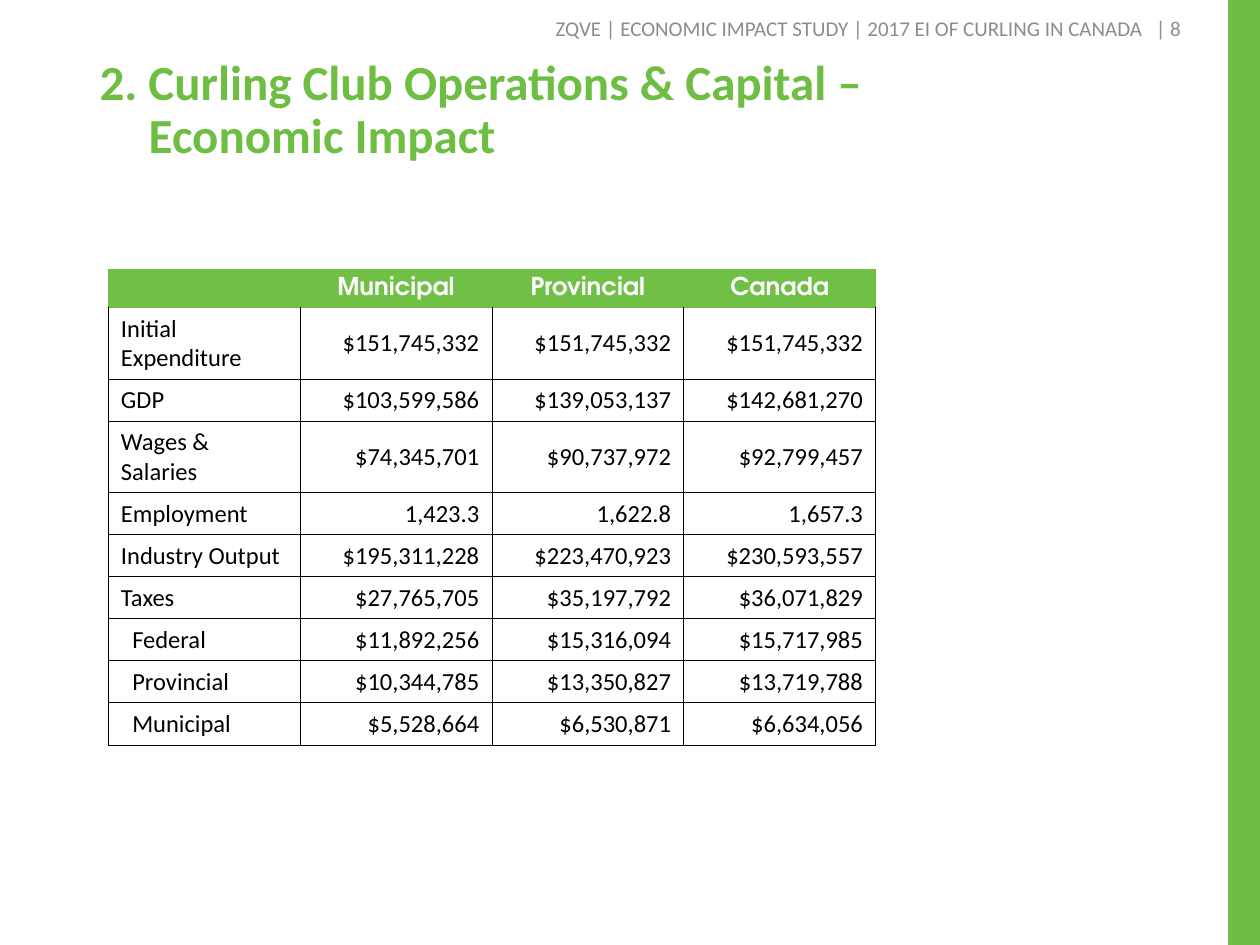
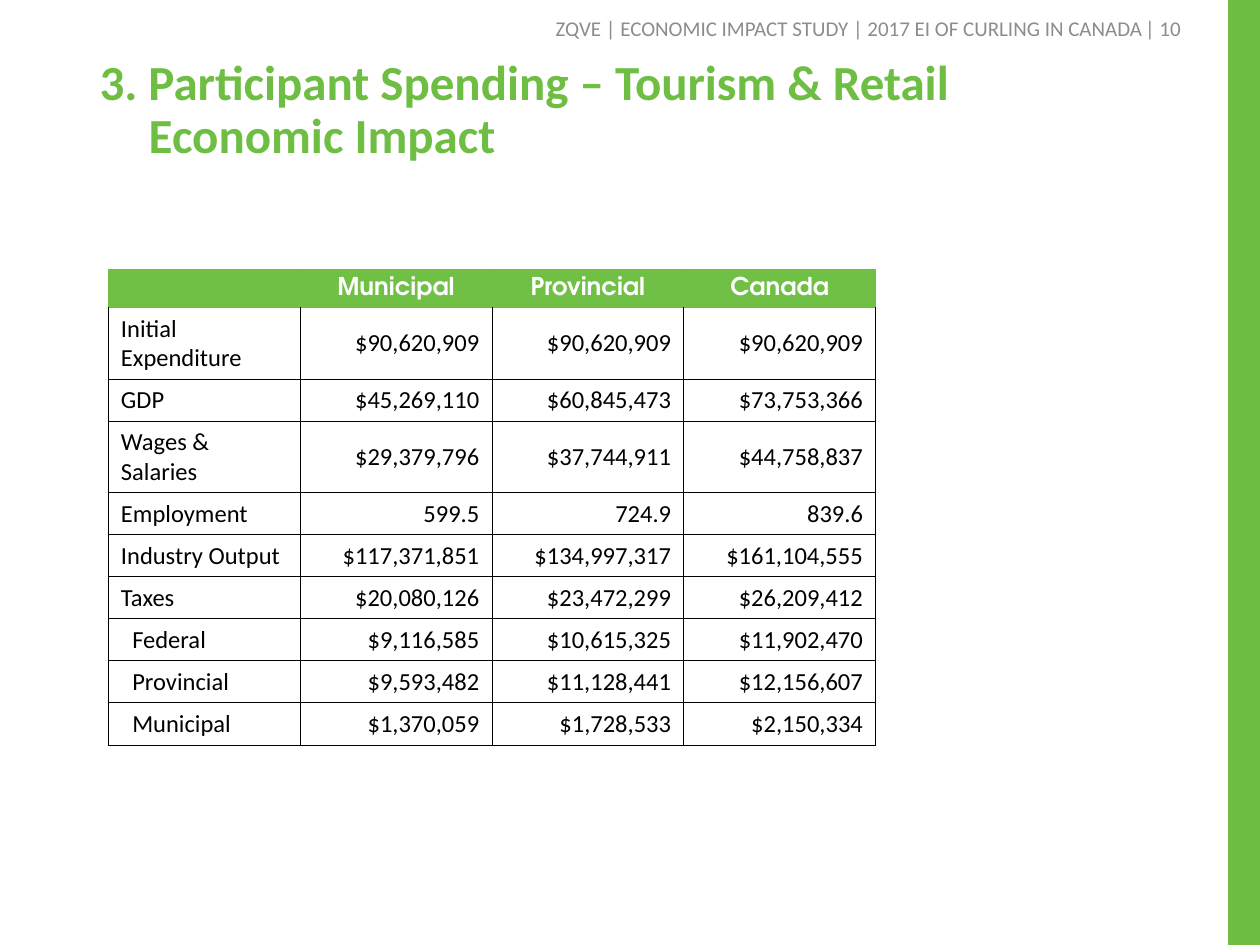
from lxml.etree import SubElement
from pptx import Presentation
from pptx.dml.color import RGBColor
from pptx.enum.shapes import MSO_SHAPE
from pptx.enum.text import MSO_ANCHOR, MSO_AUTO_SIZE, PP_ALIGN
from pptx.oxml.ns import qn
from pptx.util import Inches, Pt

GREEN, HEADER_GREEN = "6FBE44", "6FC044"
BLACK, WHITE, GREY = "000000", "FFFFFF", "8C8C8C"
BODY_FONT, HEADER_FONT = "Calibri", "TeX Gyre Adventor"
RUNNING_HEAD = "ZQVE | ECONOMIC IMPACT STUDY | 2017 EI OF CURLING IN CANADA"
TITLE_ONLY = 5
TITLE_HANG = Inches(0.39)

REGIONS = ["Municipal", "Provincial", "Canada"]
MEASURES = ["Initial Expenditure", "GDP", "Wages & Salaries", "Employment",
            "Industry Output", "Taxes", "Federal", "Provincial", "Municipal"]
TAX_LEVELS = MEASURES[-3:]

CLUB_IMPACT = [
    ["$151,745,332", "$151,745,332", "$151,745,332"],
    ["$103,599,586", "$139,053,137", "$142,681,270"],
    ["$74,345,701", "$90,737,972", "$92,799,457"],
    ["1,423.3", "1,622.8", "1,657.3"],
    ["$195,311,228", "$223,470,923", "$230,593,557"],
    ["$27,765,705", "$35,197,792", "$36,071,829"],
    ["$11,892,256", "$15,316,094", "$15,717,985"],
    ["$10,344,785", "$13,350,827", "$13,719,788"],
    ["$5,528,664", "$6,530,871", "$6,634,056"],
]
PARTICIPANT_IMPACT = [
    ["$90,620,909", "$90,620,909", "$90,620,909"],
    ["$45,269,110", "$60,845,473", "$73,753,366"],
    ["$29,379,796", "$37,744,911", "$44,758,837"],
    ["599.5", "724.9", "839.6"],
    ["$117,371,851", "$134,997,317", "$161,104,555"],
    ["$20,080,126", "$23,472,299", "$26,209,412"],
    ["$9,116,585", "$10,615,325", "$11,902,470"],
    ["$9,593,482", "$11,128,441", "$12,156,607"],
    ["$1,370,059", "$1,728,533", "$2,150,334"],
]


def rgb(value):
    return RGBColor.from_string(value)


def style_run(r, size, color, font=BODY_FONT, bold=False):
    r.font.name = font
    r.font.size = Pt(size)
    r.font.bold = bold
    r.font.color.rgb = rgb(color)


def add_title(s, text):
    title = s.shapes.title
    title.left, title.top = Inches(0.69), Inches(0.4)
    title.width, title.height = Inches(8.62), Inches(0.96)
    tf = title.text_frame
    tf.text = text
    tf.auto_size = MSO_AUTO_SIZE.NONE
    tf.vertical_anchor = MSO_ANCHOR.MIDDLE
    p = tf.paragraphs[0]
    p.alignment = PP_ALIGN.LEFT
    p.line_spacing = 0.9
    pPr = p._p.get_or_add_pPr()
    pPr.set("marL", str(TITLE_HANG))
    pPr.set("indent", str(-TITLE_HANG))
    for r in p.runs:
        style_run(r, 28, GREEN, bold=True)


def add_side_band(s):
    band = s.shapes.add_shape(MSO_SHAPE.RECTANGLE, Inches(9.75), 0,
                              Inches(0.25), Inches(7.5))
    band.shadow.inherit = False
    band.fill.solid()
    band.fill.fore_color.rgb = rgb(GREEN)
    band.line.color.rgb = rgb(GREEN)
    band.line.width = Pt(1)


def add_head_text(s, text, left, top, width, height):
    """Add a grey, right-aligned line at the top of the slide."""
    box = s.shapes.add_textbox(Inches(left), Inches(top),
                               Inches(width), Inches(height))
    tf = box.text_frame
    tf.word_wrap = True
    tf.vertical_anchor = MSO_ANCHOR.MIDDLE
    tf.text = text
    p = tf.paragraphs[0]
    p.alignment = PP_ALIGN.RIGHT
    style_run(p.runs[0], 12, GREY)


def set_borders(cell, color, top_color):
    tcPr = cell._tc.get_or_add_tcPr()
    for side in "LRTB":
        ln = SubElement(tcPr, qn(f"a:ln{side}"), w=str(Pt(0.5)))
        fill = SubElement(ln, qn("a:solidFill"))
        SubElement(fill, qn("a:srgbClr"), val=top_color if side == "T" else color)


def fill_cell(cell, text, align):
    """Write centred-in-height text and return its run."""
    cell.vertical_anchor = MSO_ANCHOR.MIDDLE
    p = cell.text_frame.paragraphs[0]
    p.alignment = align
    r = p.add_run()
    r.text = text
    return r


def add_header_cell(cell, text):
    r = fill_cell(cell, text, PP_ALIGN.CENTER)
    style_run(r, 14, WHITE, HEADER_FONT, bold=True)
    cell.margin_top = cell.margin_bottom = 0
    set_borders(cell, GREEN, GREEN)
    cell.fill.solid()
    cell.fill.fore_color.rgb = rgb(HEADER_GREEN)


def add_body_cell(cell, text, align, top_color):
    style_run(fill_cell(cell, text, align), 14, BLACK)
    set_borders(cell, BLACK, top_color)
    cell.fill.background()


def add_impact_table(s, values):
    rows, cols = len(MEASURES) + 1, len(REGIONS) + 1
    frame = s.shapes.add_table(rows, cols, Inches(0.86), Inches(2.14),
                               Inches(6.09), Inches(0.3 * rows))
    table = frame.table
    table.horz_banding = False
    for col, text in enumerate(["", *REGIONS]):
        add_header_cell(table.cell(0, col), text)
    for row, (measure, amounts) in enumerate(zip(MEASURES, values), start=1):
        top_color = GREEN if row == 1 else BLACK
        label = table.cell(row, 0)
        add_body_cell(label, measure, PP_ALIGN.LEFT, top_color)
        if measure in TAX_LEVELS:
            label.margin_left = Inches(0.19)
        for col, amount in enumerate(amounts, start=1):
            add_body_cell(table.cell(row, col), amount, PP_ALIGN.RIGHT, top_color)


def add_impact_slide(prs, number, title, values):
    s = prs.slides.add_slide(prs.slide_layouts[TITLE_ONLY])
    add_title(s, title)
    add_side_band(s)
    add_head_text(s, f"| {number}", 8.97, 0.02, 0.5, 0.4)
    add_head_text(s, RUNNING_HEAD, 3.74, 0.06, 5.43, 0.32)
    add_impact_table(s, values)


def main():
    prs = Presentation()
    prs.slide_width, prs.slide_height = Inches(10), Inches(7.5)
    add_impact_slide(prs, 8, "2. Curling Club Operations & Capital – \vEconomic Impact",
                     CLUB_IMPACT)
    add_impact_slide(prs, 10, "3. Participant Spending – Tourism & Retail \vEconomic Impact",
                     PARTICIPANT_IMPACT)
    prs.save("out.pptx")


if __name__ == "__main__":
    main()
